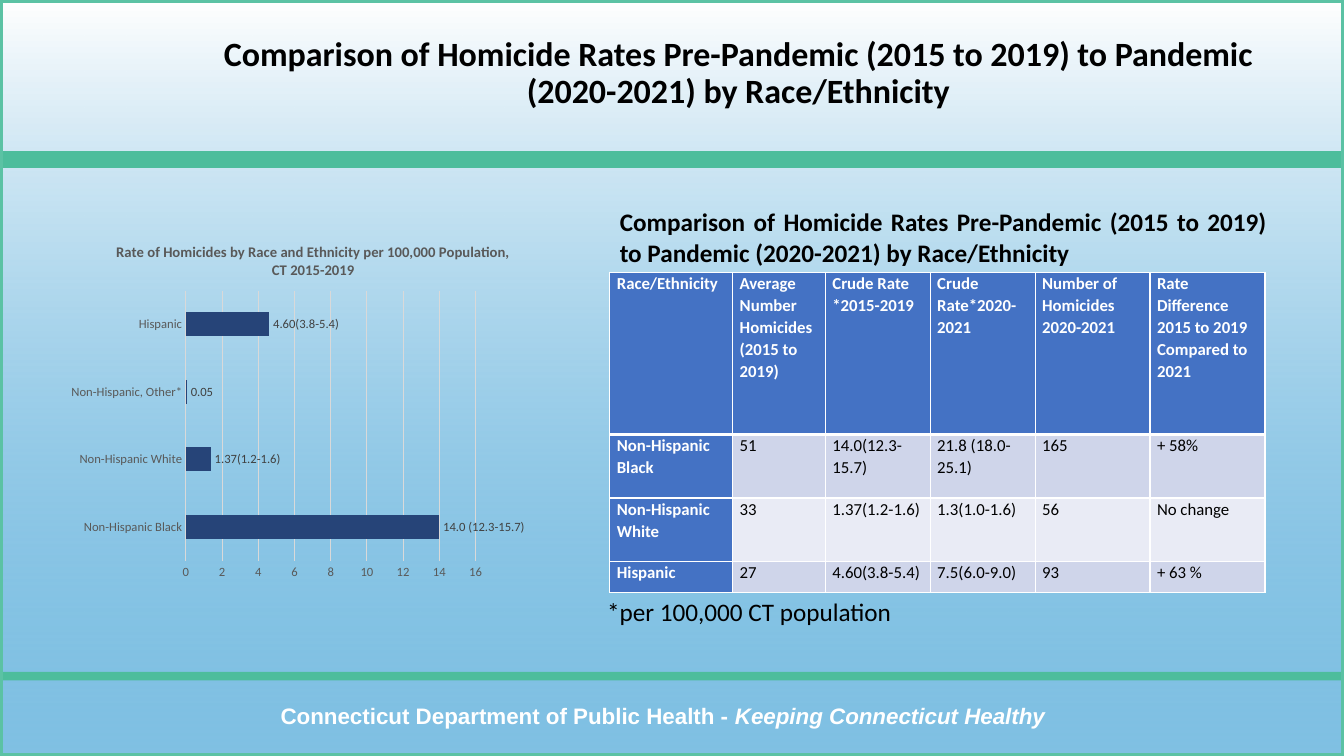
from lxml import etree
from pptx import Presentation
from pptx.chart.data import CategoryChartData
from pptx.dml.color import RGBColor
from pptx.enum.chart import XL_CHART_TYPE, XL_LABEL_POSITION, XL_TICK_MARK
from pptx.enum.shapes import MSO_SHAPE
from pptx.enum.text import MSO_ANCHOR, PP_ALIGN
from pptx.oxml import parse_xml
from pptx.oxml.ns import nsdecls, qn
from pptx.util import Pt

BAR = XL_CHART_TYPE.BAR_CLUSTERED
OUTER = XL_LABEL_POSITION.OUTSIDE_END
NO_TICK = XL_TICK_MARK.NONE
RECT = MSO_SHAPE.RECTANGLE
MIDDLE = MSO_ANCHOR.MIDDLE
CENTER, JUST = PP_ALIGN.CENTER, PP_ALIGN.JUSTIFY

WIDE, HIGH = 960, 540
GREEN, WHITE, BLACK, BLUE = "4DBD9C", "FFFFFF", "000000", "4472C4"
TITLE = ("Comparison of Homicide Rates Pre-Pandemic (2015 to 2019) "
         "to Pandemic (2020-2021) by Race/Ethnicity")

HEAD = {"name": "Calibri", "size": Pt(24.3), "bold": True, "color": BLACK}
SUB = {**HEAD, "size": Pt(18)}
NOTE = {**SUB, "bold": False}
FOOT = {"name": "Arial", "size": Pt(16), "bold": True, "color": WHITE}
CELL = {"name": "Calibri", "size": Pt(12), "bold": False, "color": BLACK}
KEY = {**CELL, "bold": True, "color": WHITE}
AXIS = {"name": "Calibri", "size": Pt(9), "bold": False, "color": "595959"}
LABEL = {**AXIS, "color": "404040"}
NAME = {**AXIS, "size": Pt(10.5), "bold": True}

RATES = [("Non-Hispanic Black", 14, "14.0 (12.3-15.7)"),
         ("Non-Hispanic White", 1.37, "1.37(1.2-1.6)"),
         ("Non-Hispanic, Other*", 0.05, None),
         ("Hispanic", 4.6, "4.60(3.8-5.4)")]
COLS = [87.8, 66.2, 74.9, 74.9, 82.1, 82.1]
ROWS = [115.9, 45.4, 45.4, 22.3]
DATA = [
    ["Race/Ethnicity", "Average Number Homicides (2015 to 2019)",
     "Crude Rate *2015-2019", "Crude Rate*2020-2021",
     "Number of Homicides 2020-2021",
     "Rate Difference 2015 to 2019 Compared to 2021"],
    ["Non-Hispanic Black", "51", "14.0(12.3-15.7)", "21.8 (18.0-25.1)",
     "165", "+ 58%"],
    ["Non-Hispanic White", "33", "1.37(1.2-1.6)", "1.3(1.0-1.6)",
     "56", "No change"],
    ["Hispanic", "27", "4.60(3.8-5.4)", "7.5(6.0-9.0)", "93", "+ 63 %"],
]


def hue(code):
    """Turn a hex string into a colour."""
    return RGBColor.from_string(code)


def style(font, form):
    """Set font attributes from a dict."""
    for key, val in form.items():
        if key == "color":
            font.color.rgb = hue(val)
        else:
            setattr(font, key, val)


def write(para, text, form, **more):
    """Add a styled run and set the paragraph's attributes."""
    run = para.add_run()
    run.text = text
    style(run.font, form)
    for key, val in more.items():
        setattr(para, key, val)
    return run


def label(slide, box, wrap=True):
    """Add a text box and return its frame."""
    frame = slide.shapes.add_textbox(*map(Pt, box)).text_frame
    frame.word_wrap = wrap
    return frame


def block(slide, box, fill=None):
    """Add a plain rectangle."""
    shape = slide.shapes.add_shape(RECT, *map(Pt, box))
    shape.shadow.inherit = False
    shape.line.fill.background()
    if fill:
        shape.fill.solid()
        shape.fill.fore_color.rgb = hue(fill)
    else:
        shape.fill.background()
    return shape


def ground(slide, box):
    """Draw the shaded ground, green bands and frame."""
    left, top, wide, high = box
    fill = block(slide, box).fill
    fill.gradient()
    fill.gradient_angle = 90
    for stop, code in zip(fill.gradient_stops, ("0082C8", WHITE)):
        stop.color.rgb = hue(code)
    tint = slide.shapes[-1].element.find(".//" + qn("a:srgbClr"))
    etree.SubElement(tint, qn("a:alpha"), val="50000")
    for down, thick in ((480, 6), (108, 12)):
        block(slide, (left, top + down, wide, thick), GREEN)
    line = block(slide, box).line
    line.color.rgb = hue("5BC2A4")
    line.width = Pt(4.5)


def footer(slide, box):
    """Write the department line."""
    frame = label(slide, box)
    frame.margin_right = Pt(20)
    para = frame.paragraphs[0]
    write(para, "Connecticut Department of Public Health - ", FOOT,
          alignment=CENTER)
    write(para, "Keeping Connecticut Healthy", {**FOOT, "italic": True})


def header(slide, box):
    """Place the title placeholder on top of the ground."""
    title = slide.shapes.title
    slide.shapes.element.append(title.element)
    for key, val in zip(("left", "top", "width", "height"), box):
        setattr(title, key, Pt(val))
    frame = title.text_frame
    frame.word_wrap = True
    frame.vertical_anchor = MIDDLE
    write(frame.paragraphs[0], TITLE, HEAD, alignment=CENTER,
          line_spacing=0.9)


def edge(cell, row):
    """Draw white borders, thick below the header row."""
    props = cell._tc.get_or_add_tcPr()
    for side in "LRTB":
        thick = (row, side) in ((0, "B"), (1, "T"))
        props.append(parse_xml(
            f'<a:ln{side} {nsdecls("a")} w="{Pt(3 if thick else 1)}">'
            f'<a:solidFill><a:srgbClr val="{WHITE}"/></a:solidFill>'
            f'</a:ln{side}>'))


def panel(slide, box):
    """Place the caption, table and note."""
    left, top, wide, high = box
    write(label(slide, (left, top, wide, 51)).paragraphs[0], TITLE, SUB,
          alignment=JUST)
    spot = map(Pt, (left, top + 50.4, sum(COLS), sum(ROWS)))
    table = slide.shapes.add_table(len(ROWS), len(COLS), *spot).table
    for col, size in zip(table.columns, COLS):
        col.width = Pt(size)
    for row, (size, texts) in enumerate(zip(ROWS, DATA)):
        table.rows[row].height = Pt(size)
        for col, text in enumerate(texts):
            cell = table.cell(row, col)
            cell.margin_left = cell.margin_right = Pt(5)
            cell.margin_top = cell.margin_bottom = 0
            key = row == 0 or col == 0
            edge(cell, row)
            cell.fill.solid()
            band = "CFD5EA" if row % 2 else "E9EBF5"
            cell.fill.fore_color.rgb = hue(BLUE if key else band)
            write(cell.text_frame.paragraphs[0], text, KEY if key else CELL,
                  line_spacing=1.07)
    note = label(slide, (left - 9, top + high - 29.5, 220, 29.5), False)
    write(note.paragraphs[0], "*per 100,000 CT population", NOTE,
          alignment=JUST, line_spacing=1.07, space_after=Pt(8))


def layout(chart):
    """Fix the inner plot area inside the chart."""
    area = chart.element.find(".//" + qn("c:plotArea"))
    for old in area.findall(qn("c:layout")):
        area.remove(old)
    parts = [("layoutTarget", "inner"), ("xMode", "edge"), ("yMode", "edge"),
             ("x", 0.254), ("y", 0.174), ("w", 0.56), ("h", 0.737)]
    inner = "".join(f'<c:{tag} val="{val}"/>' for tag, val in parts)
    area.insert(0, parse_xml(
        f'<c:layout {nsdecls("c")}><c:manualLayout>{inner}'
        f'</c:manualLayout></c:layout>'))


def graph(slide, box):
    """Chart the rates by race and ethnicity."""
    data = CategoryChartData()
    data.categories = [name for name, _, _ in RATES]
    data.add_series("Series 1", [rate for _, rate, _ in RATES])
    chart = slide.shapes.add_chart(BAR, *map(Pt, box), data).chart
    style(chart.font, {**AXIS, "size": Pt(10), "color": BLACK})
    chart.has_legend = False
    chart.has_title = True
    write(chart.chart_title.text_frame.paragraphs[0],
          "Rate of Homicides by Race and Ethnicity per 100,000 Population, "
          "CT 2015-2019", NAME)
    layout(chart)
    cat, val = chart.category_axis, chart.value_axis
    for axis in (cat, val):
        axis.major_tick_mark = axis.minor_tick_mark = NO_TICK
        style(axis.tick_labels.font, AXIS)
    val.minimum_scale, val.maximum_scale, val.major_unit = 0, 16, 2
    val.format.line.fill.background()
    cat.has_major_gridlines = False
    for line in (cat.format.line, val.major_gridlines.format.line):
        line.color.rgb = hue("D9D9D9")
        line.width = Pt(0.75)
    plot = chart.plots[0]
    plot.gap_width = 182
    plot.vary_by_categories = False
    bars = plot.series[0]
    bars.format.fill.solid()
    bars.format.fill.fore_color.rgb = hue("264478")
    tags = bars.data_labels
    tags.show_value = True
    tags.position = OUTER
    style(tags.font, LABEL)
    for num, (_, _, text) in enumerate(RATES):
        if text:
            tag = bars.points[num].data_label
            write(tag.text_frame.paragraphs[0], text, LABEL)
            tag.position = OUTER


def main():
    """Build and save the slide."""
    deck = Presentation()
    deck.slide_width, deck.slide_height = Pt(WIDE), Pt(HIGH)
    slide = deck.slides.add_slide(deck.slide_layouts[5])
    ground(slide, (0, 0, WIDE, HIGH))
    footer(slide, (56, 498, 848, 27))
    header(slide, (152, 18.5, 751, 69))
    panel(slide, (435.6, 144, 476.6, 306.7))
    graph(slide, (39, 162, 369.4, 262))
    deck.save("out.pptx")


if __name__ == "__main__":
    main()
